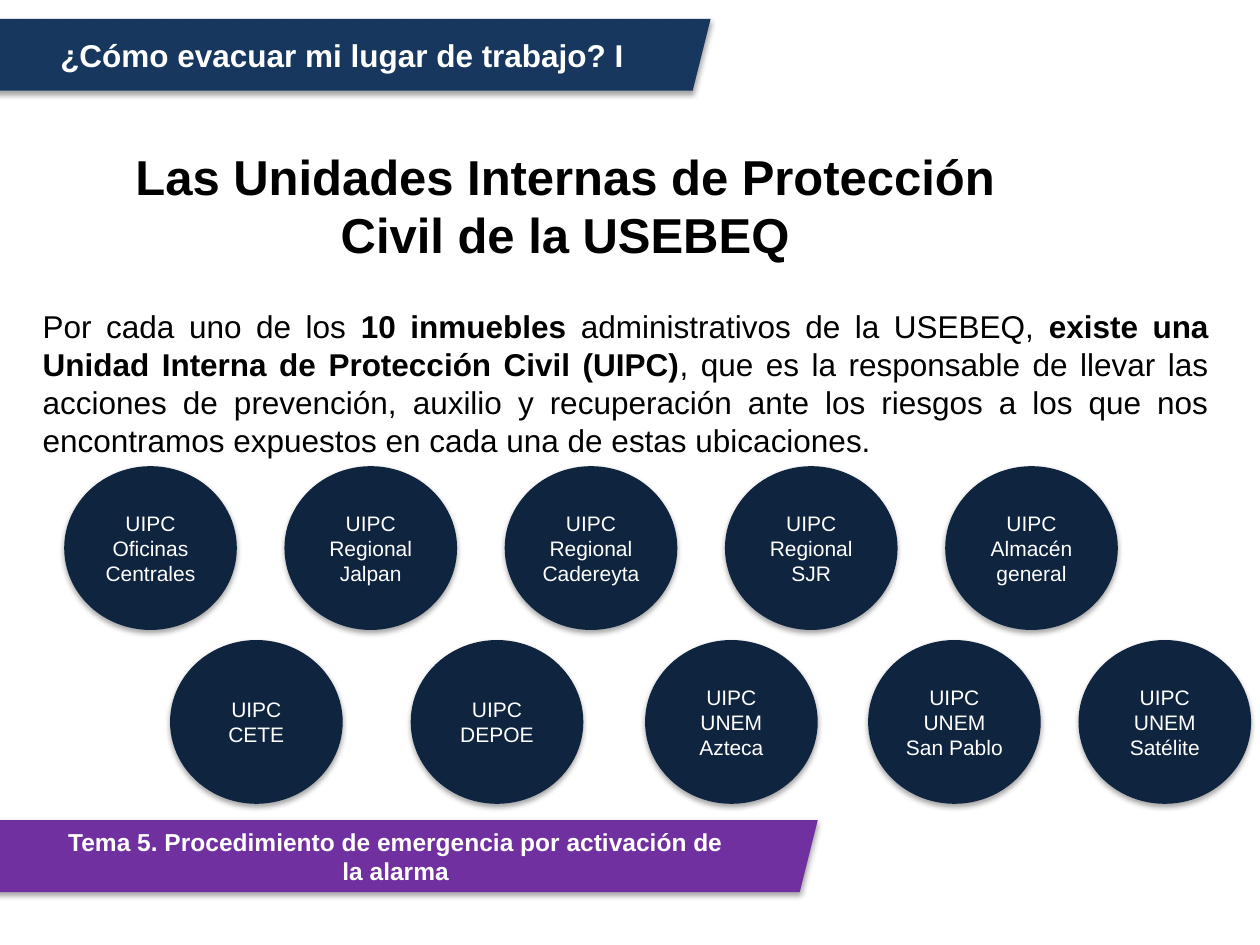
from dataclasses import dataclass
from lxml.etree import SubElement
from pptx import Presentation
from pptx.dml.color import RGBColor
from pptx.enum.shapes import MSO_SHAPE
from pptx.enum.text import MSO_ANCHOR, PP_ALIGN
from pptx.oxml.ns import qn
from pptx.util import Inches, Pt

COLUMNS, ROWS = 100, 75
SLIDE_WIDTH, SLIDE_HEIGHT = Inches(10), Inches(7.5)


@dataclass(frozen=True)
class Theme:
    font: str = "Arial"
    navy: str = "17375E"
    purple: str = "7030A0"
    midnight: str = "0F243E"
    light: str = "FFFFFF"
    dark: str = "000000"
    title: int = 28
    body: int = 18
    topic: int = 14
    label: int = 12


THEME = Theme()


def place(left, top, width, height):
    column, row = SLIDE_WIDTH / COLUMNS, SLIDE_HEIGHT / ROWS
    return [round(cells * unit) for cells, unit in
            zip((left, top, width, height), (column, row, column, row))]


def add_shadow(shape):
    shape.shadow.inherit = False
    effects = shape._element.spPr.find(qn("a:effectLst"))
    shadow = SubElement(effects, qn("a:outerShdw"), blurRad=str(Pt(3.1)),
                        dist=str(Pt(1.8)), dir="5400000", rotWithShape="0")
    tint = SubElement(shadow, qn("a:srgbClr"), val=THEME.dark)
    SubElement(tint, qn("a:alpha"), val="35000")


def write(shape, runs, size, color, align=PP_ALIGN.CENTER,
          anchor=MSO_ANCHOR.MIDDLE, margin=0.1):
    frame = shape.text_frame
    layout = {"word_wrap": True, "vertical_anchor": anchor,
              "margin_left": Inches(margin), "margin_right": Inches(margin)}
    for name, value in layout.items():
        setattr(frame, name, value)
    paragraph = frame.paragraphs[0]
    paragraph.alignment = align
    for words, bold in runs:
        run = paragraph.add_run()
        run.text = words
        style = {"name": THEME.font, "size": Pt(size), "bold": bold}
        for name, value in style.items():
            setattr(run.font, name, value)
        run.font.color.rgb = RGBColor.from_string(color)


def add_figure(slide, kind, box, fill, words, size, bold=False, margin=0.1):
    figure = slide.shapes.add_shape(kind, *place(*box))
    figure.fill.solid()
    figure.fill.fore_color.rgb = RGBColor.from_string(fill)
    figure.line.fill.background()
    add_shadow(figure)
    write(figure, [(words, bold)], size, THEME.light, margin=margin)


def add_banner(slide, top, width, fill, words, size):
    add_figure(slide, MSO_SHAPE.PARALLELOGRAM, (-2.1, top, width, 5.7),
               fill, words, size, bold=True)


def add_text(slide, box, runs, size, align):
    passage = slide.shapes.add_textbox(*place(*box))
    write(passage, runs, size, THEME.dark, align, MSO_ANCHOR.TOP)


def add_units(slide, top, lefts, units):
    for left, unit in zip(lefts, units):
        add_figure(slide, MSO_SHAPE.OVAL, (left, top, 13.7, 13), THEME.midnight,
                   f"UIPC {unit}", THEME.label, margin=0.08)


def main():
    deck = Presentation()
    deck.slide_width, deck.slide_height = SLIDE_WIDTH, SLIDE_HEIGHT
    slide = deck.slides.add_slide(deck.slide_layouts[6])

    add_banner(slide, 1.5, 58.5, THEME.navy,
               "¿Cómo evacuar mi lugar de trabajo? I", THEME.body)
    add_banner(slide, 65.1, 67, THEME.purple,
               "Tema 5. Procedimiento de emergencia por activación de la alarma",
               THEME.topic)
    add_text(slide, (9.5, 11.1, 70.7, 10.4),
             [("Las Unidades Internas de Protección Civil de la USEBEQ", True)],
             THEME.title, PP_ALIGN.CENTER)
    add_text(slide, (2.4, 23.9, 94.5, 13.1), [
        ("Por cada uno de los ", False),
        ("10 inmuebles ", True),
        ("administrativos de la USEBEQ, ", False),
        ("existe una Unidad Interna de Protección Civil (UIPC)", True),
        (", que es la responsable de llevar las acciones de prevención, "
         "auxilio y recuperación ante los riesgos a los que nos encontramos "
         "expuestos en cada una de estas ubicaciones.", False),
    ], THEME.body, PP_ALIGN.JUSTIFY)

    add_units(slide, 37, [5.1 + 17.48 * column for column in range(5)],
              ["Oficinas Centrales", "Regional Jalpan", "Regional Cadereyta",
               "Regional SJR", "Almacén general"])
    add_units(slide, 50.8, [13.5, 32.6, 51.2, 68.9, 85.6],
              ["CETE", "DEPOE", "UNEM Azteca", "UNEM San Pablo",
               "UNEM Satélite"])
    deck.save("out.pptx")


if __name__ == "__main__":
    main()
